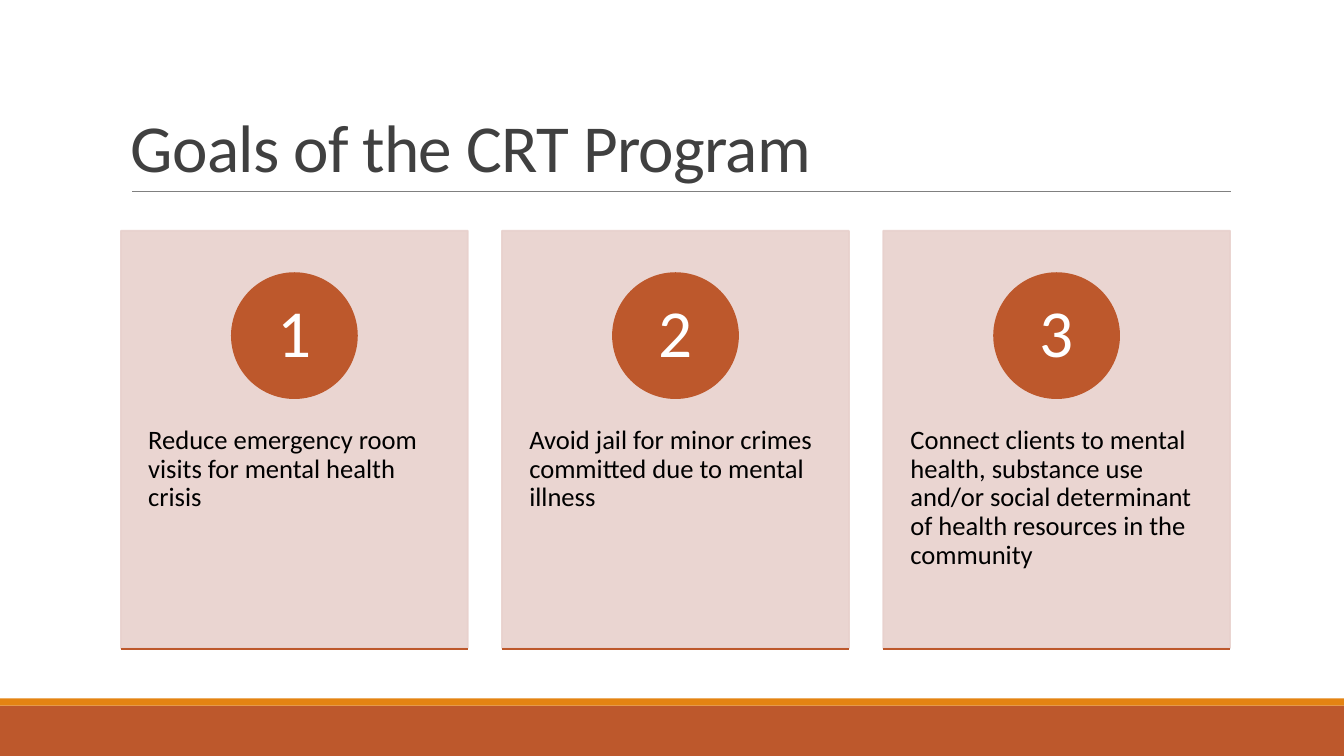
from lxml import etree
from pptx import Presentation
from pptx.dml.color import RGBColor
from pptx.enum.shapes import MSO_CONNECTOR, MSO_SHAPE
from pptx.enum.text import MSO_ANCHOR, PP_ALIGN
from pptx.oxml.ns import qn
from pptx.util import Inches, Pt

COLORS = {
    "rust": "BD582C",
    "orange": "E48312",
    "card": "E8D1CD",
    "rule": "808080",
    "title": "404040",
    "body": "000000",
    "number": "FFFFFF",
}
GOALS = [
    "Reduce emergency room visits for mental health crisis",
    "Avoid jail for minor crimes committed due to mental illness",
    "Connect clients to mental health, substance use and/or social determinant "
    "of health resources in the community",
]
CARD_LEFT, CARD_TOP, CARD_WIDTH, CARD_HEIGHT = 1.2, 2.29, 3.44, 4.14
CARD_STEP = 3.78
CIRCLE_SIZE = 1.24

deck = Presentation()
deck.slide_width = Inches(13.33)
deck.slide_height = Inches(7.5)
page = deck.slides.add_slide(deck.slide_layouts[6])


def add_block(kind, left, top, width, height, color):
    block = page.shapes.add_shape(
        kind, Inches(left), Inches(top), Inches(width), Inches(height))
    block.shadow.inherit = False
    block.fill.solid()
    block.fill.fore_color.rgb = RGBColor.from_string(COLORS[color])
    block.line.fill.background()
    return block


def write(shape, text, size, color, anchor, align, spacing, inset_x, inset_y):
    frame = shape.text_frame
    frame.word_wrap = True
    frame.vertical_anchor = anchor
    frame.margin_left = frame.margin_right = Inches(inset_x)
    frame.margin_top = frame.margin_bottom = Inches(inset_y)
    frame.text = text
    para = frame.paragraphs[0]
    para.alignment = align
    para.line_spacing = spacing
    span = para.runs[0]
    span.font.name = "Calibri"
    span.font.size = Pt(size)
    span.font.color.rgb = RGBColor.from_string(COLORS[color])
    return span


add_block(MSO_SHAPE.RECTANGLE, 0, 7, 13.33, 0.5, "rust")
add_block(MSO_SHAPE.RECTANGLE, 0, 6.93, 13.33, 0.07, "orange")

title = page.shapes.add_textbox(Inches(1.2), Inches(0.31), Inches(11), Inches(1.59))
title_span = write(title, "Goals of the CRT Program", 48, "title",
                   MSO_ANCHOR.BOTTOM, PP_ALIGN.LEFT, 0.85, 0.1, 0.05)
title_span.font._element.set("spc", "-50")

rules = [(1.31, 1.9, 10.9, "rule", 0.5)]

for index, goal in enumerate(GOALS):
    left = CARD_LEFT + index * CARD_STEP
    card = add_block(MSO_SHAPE.RECTANGLE, left, CARD_TOP, CARD_WIDTH, CARD_HEIGHT, "card")
    card.line.color.rgb = RGBColor.from_string(COLORS["card"])
    card.line.width = Pt(1.25)
    for color_node in card._element.spPr.iter(qn("a:srgbClr")):
        etree.SubElement(color_node, qn("a:alpha")).set("val", "90000")

    box = page.shapes.add_textbox(
        Inches(left), Inches(3.87), Inches(CARD_WIDTH), Inches(2.48))
    write(box, goal, 19, "body", MSO_ANCHOR.TOP, PP_ALIGN.LEFT, 0.9, 0.27, 0.36)

    circle_left = left + (CARD_WIDTH - CIRCLE_SIZE) / 2
    circle = add_block(MSO_SHAPE.OVAL, circle_left, 2.71, CIRCLE_SIZE, CIRCLE_SIZE, "rust")
    circle.line.color.rgb = RGBColor.from_string(COLORS["rust"])
    circle.line.width = Pt(1.25)
    write(circle, str(index + 1), 48, "number",
          MSO_ANCHOR.MIDDLE, PP_ALIGN.CENTER, 0.9, 0.1, 0.01)

    rules.append((left, 6.44, CARD_WIDTH, "rust", 1.25))

for left, top, width, color, weight in rules:
    rule = page.shapes.add_connector(
        MSO_CONNECTOR.STRAIGHT, Inches(left), Inches(top), Inches(left + width), Inches(top))
    rule.line.color.rgb = RGBColor.from_string(COLORS[color])
    rule.line.width = Pt(weight)
    etree.SubElement(rule._element.spPr, qn("a:effectLst"))

deck.save("out.pptx")
